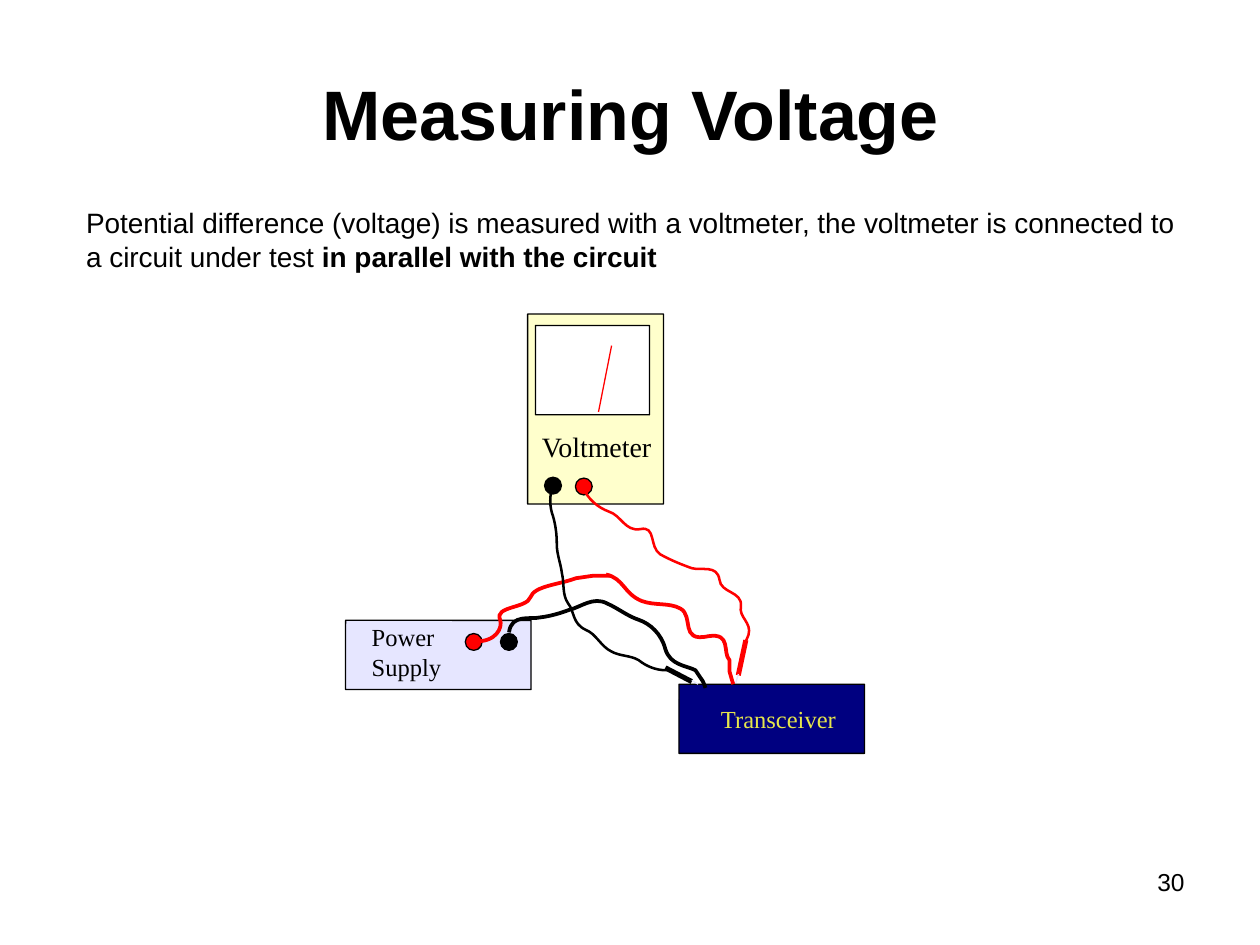
from lxml import etree
from pptx import Presentation
from pptx import util as u
from pptx.dml.color import RGBColor
from pptx.enum import shapes, text
from pptx.oxml import ns

HUES = {"black": "000000", "red": "FF0000", "white": "FFFFFF", "cream": "FFFFCC",
        "lilac": "E6E6FF", "navy": "000080", "yellow": "E6E64C"}
SANS, SERIF = "Arial", "Times New Roman"
KIND = shapes.MSO_SHAPE
ALIGN = text.PP_ALIGN


def hue(name):
    return RGBColor.from_string(HUES[name])


class Board:
    def __init__(self, slide, edge=0.75):
        self.slide, self.edge = slide, edge

    def pen(self, line, color, width):
        line.color.rgb = hue(color)
        line.width = u.Pt(width)

    def solid(self, kind, box, fill):
        item = self.slide.shapes.add_shape(kind, *map(u.Pt, box))
        item.shadow.inherit = False
        item.fill.solid()
        item.fill.fore_color.rgb = hue(fill)
        self.pen(item.line, "black", self.edge)
        return item

    def panel(self, box, fill):
        self.solid(KIND.ROUNDED_RECTANGLE, box, fill).adjustments[0] = 0.002

    def jack(self, left, top, fill):
        self.solid(KIND.OVAL, (left, top, 9.6, 9.6), fill)

    def line(self, start, end, color, width):
        item = self.slide.shapes.add_connector(
            shapes.MSO_CONNECTOR.STRAIGHT, *map(u.Pt, start + end))
        self.pen(item.line, color, width)
        etree.SubElement(item.element.spPr, ns.qn("a:effectLst"))

    def wire(self, color, width, start, *steps):
        """A step of six numbers is a curve, one of two is straight."""
        pts = [tuple(map(u.Pt, step[i:i + 2]))
               for step in steps for i in range(0, len(step), 2)]
        pen = self.slide.shapes.build_freeform(*map(u.Pt, start), scale=1.0)
        pen.add_line_segments(pts, close=False)
        item = pen.convert_to_shape()
        # Join each three points of a curve into one segment
        legs = iter(list(item.element.iter(ns.qn("a:lnTo"))))
        for step in steps:
            leg = next(legs)
            if len(step) == 6:
                leg.tag = ns.qn("a:cubicBezTo")
                for more in (next(legs), next(legs)):
                    leg.append(more[0])
                    more.getparent().remove(more)
        item.shadow.inherit = False
        item.fill.background()
        self.pen(item.line, color, width)

    def words(self, box, paras, size, font=SANS, color="black", align=ALIGN.LEFT,
              inset=(0, 0, 0, 0), anchor=text.MSO_ANCHOR.TOP, space=None, gap=0):
        """Each paragraph is a list of (wording, bold) runs."""
        frame = self.slide.shapes.add_textbox(*map(u.Pt, box)).text_frame
        frame.word_wrap = True
        frame.vertical_anchor = anchor
        (frame.margin_left, frame.margin_top,
         frame.margin_right, frame.margin_bottom) = map(u.Pt, inset)
        for i, runs in enumerate(paras):
            para = frame.add_paragraph() if i else frame.paragraphs[0]
            para.alignment = align
            para.space_before = u.Pt(gap)
            if space:
                para.line_spacing = space
            for wording, bold in runs:
                run = para.add_run()
                run.text = wording
                run.font.name, run.font.size = font, u.Pt(size)
                run.font.bold = bold
                run.font.color.rgb = hue(color)

    def label(self, box, wording, size, left, color="black"):
        self.words(box, [[(wording, False)]], size, SERIF, color,
                   inset=(left, 0, 0, 0), space=1.01)


def main():
    deck = Presentation()
    deck.slide_width, deck.slide_height = u.Pt(720), u.Pt(540)
    board = Board(deck.slides.add_slide(deck.slide_layouts[6]))
    pad = (7.2, 3.6, 7.2, 3.6)

    # Page number and title
    board.words((516, 492, 168, 37), [[("30", False)]], 14, align=ALIGN.RIGHT, inset=pad)
    board.words((36, 43.5, 648.5, 46), [[("Measuring Voltage", True)]], 40,
                align=ALIGN.CENTER, anchor=text.MSO_ANCHOR.MIDDLE, space=0.95)

    # Voltmeter case and dial
    board.panel((301.5, 179.5, 77.7, 108.5), "cream")
    board.panel((306, 186, 65.2, 51), "white")
    board.line((342, 235.4), (349.5, 197.5), "red", 0.75)

    # Power supply and transceiver
    board.panel((197.5, 354.5, 106, 39.5), "lilac")
    board.jack(265.9, 362, "red")
    board.jack(286, 362, "black")
    board.label((201.6, 355.4, 62, 34), "Power Supply", 14, 10.8)
    board.panel((388, 391, 106, 39.5), "navy")
    board.label((408.2, 402.1, 73.5, 17.3), "Transceiver", 14, 3.8, "yellow")

    # Supply wires
    board.wire("black", 2.15, (290.9, 361.4),
               (292.3, 350.6, 303.1, 354.2, 308.9, 352.8),
               (314.6, 352.1, 319.7, 350.6, 325.4, 348.5),
               (331.9, 347, 339.1, 340.6, 347, 344.9),
               (353.5, 347.8, 358.6, 352.1, 365, 354.2),
               (371.5, 356.4, 378, 362.2, 380.2, 370.8),
               (383, 380.2, 391.7, 380.2, 397.4, 383),
               (401.8, 389.5), (403.2, 393.1))
    board.wire("red", 2.15, (270.7, 366.5),
               (283.7, 367.2, 287.3, 358.6, 285.8, 354.2),
               (282.2, 346.3, 301, 347.8, 303.1, 341.3),
               (305.3, 334.8, 319.7, 334.1, 329, 330.5),
               (339.1, 329), (347.8, 329), (348.5, 329))
    board.wire("red", 2.15, (346.3, 328.3),
               (356.4, 330.5, 356.4, 339.1, 366.5, 343.4),
               (374.4, 346.3, 382.3, 344.2, 388.8, 347.8),
               (396.7, 352.1, 388.1, 367.2, 404.6, 363.6),
               (418.3, 361.4, 412.6, 373, 416.9, 377.3),
               (416.9, 383.8), (418.3, 388.8), (419, 391))

    # Meter jacks and probes
    board.jack(328.8, 273.2, "red")
    board.jack(311.2, 272.7, "black")
    board.line((421.9, 385.9), (426.2, 365.8), "red", 2.89)
    board.line((421.9, 385.2), (420.5, 390.2), "lilac", 0.71)
    board.line((395.3, 389.5), (380.2, 381.6), "black", 2.89)
    board.line((395.3, 388.8), (398.9, 391), "lilac", 0.71)
    board.label((305.3, 245.5, 71.3, 19.4), "Voltmeter", 16, 4.3)

    # Meter leads
    board.wire("red", 1.45, (333.4, 278.6),
               (335.5, 285.1, 342, 290.2, 347.8, 292.3),
               (355, 294.5, 357.1, 303.8, 365.8, 302.4),
               (375.1, 300.2, 370.8, 312.5, 377.3, 316.8),
               (383.8, 320.4, 389.5, 322.6, 395.3, 324.7),
               (401, 326.2, 409.7, 322.6, 411.1, 331.2),
               (411.8, 339.1, 424.1, 337.7, 423.4, 346.3),
               (421.9, 352.8, 429.8, 355.7, 427.7, 362.9),
               (426.2, 366.5))
    board.wire("black", 1.45, (316.1, 277.2),
               (313.9, 283, 313.9, 289.4, 316.1, 295.2),
               (317.5, 300.2, 318.2, 305.3, 318.2, 311),
               (318.2, 316.8, 320.4, 321.8, 321.1, 327.6),
               (322.6, 333.4, 321.1, 339.8, 324.7, 344.9),
               (328.3, 349.2, 326.9, 356.4, 334.8, 360),
               (340.6, 362.2, 343.4, 369.4, 349.2, 372.2),
               (354.2, 375.1, 360, 374.4, 365, 377.3),
               (369.4, 380.9, 375.1, 383, 380.2, 383),
               (380.9, 383))

    # Body
    board.words((42.1, 113.8, 648, 356.4), [
        [("Potential difference (voltage) is measured with a voltmeter, "
          "the voltmeter is connected to", False)],
        [("a circuit under test ", False), ("in parallel with the circuit", True)],
    ], 16, inset=pad, gap=0.5)

    deck.save("out.pptx")


if __name__ == "__main__":
    main()
